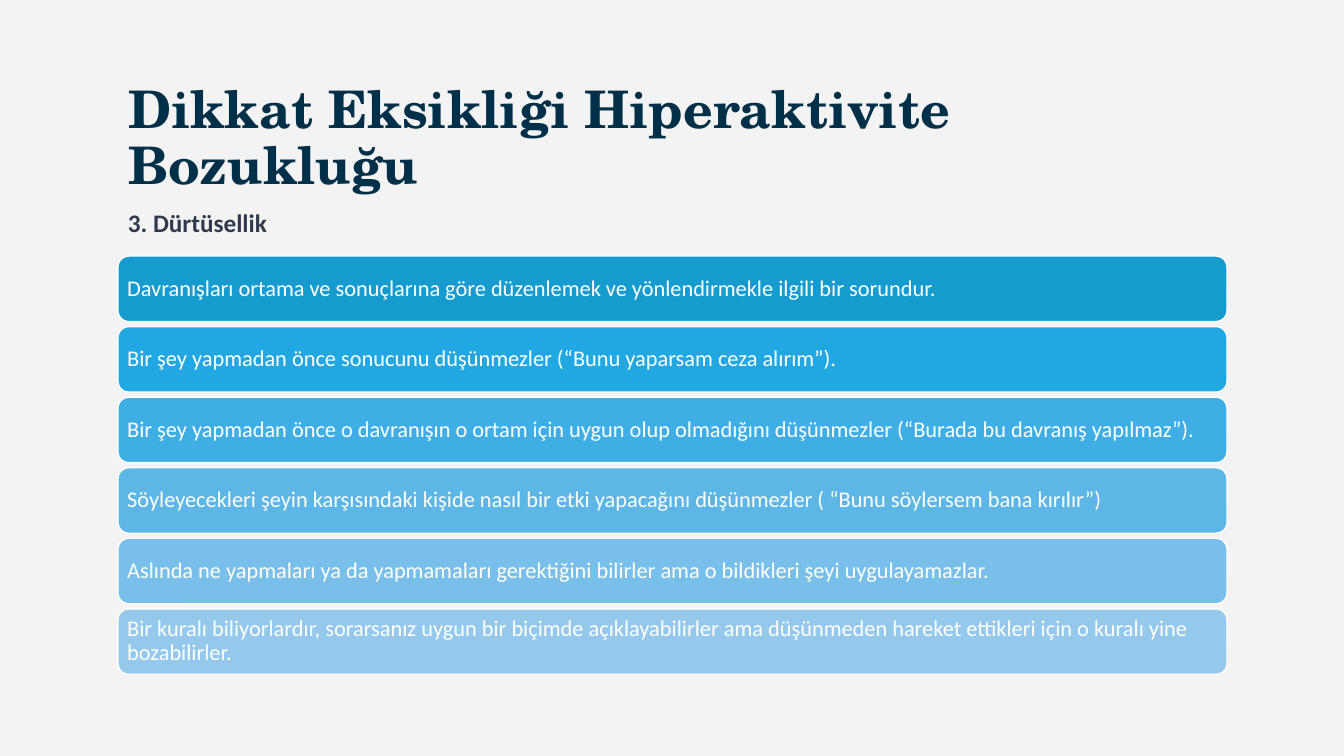
import pptx
import pptx.dml.color
import pptx.enum.shapes
import pptx.enum.text
import pptx.util

EMU_PER_PX = 9144  # 100 px to the inch
LEFT, WIDTH = 117, 1100
BAR_TOP, BAR_HEIGHT, BAR_PITCH = 254, 65, 70
MIDDLE = pptx.enum.text.MSO_ANCHOR.MIDDLE
TOP = pptx.enum.text.MSO_ANCHOR.TOP

BARS = [
    ("169BCE", "Davranışları ortama ve sonuçlarına göre düzenlemek ve yönlendirmekle ilgili bir sorundur."),
    ("21A8E2", "Bir şey yapmadan önce sonucunu düşünmezler (“Bunu yaparsam ceza alırım”)."),
    ("3FAEE4", "Bir şey yapmadan önce o davranışın o ortam için uygun olup olmadığını düşünmezler "
               "(“Burada bu davranış yapılmaz”)."),
    ("5CB6E6", "Söyleyecekleri şeyin karşısındaki kişide nasıl bir etki yapacağını düşünmezler "
               "( “Bunu söylersem bana kırılır”)"),
    ("78BFE9", "Aslında ne yapmaları ya da yapmamaları gerektiğini bilirler ama o bildikleri şeyi uygulayamazlar."),
    ("94C9EC", "Bir kuralı biliyorlardır, sorarsanız uygun bir biçimde açıklayabilirler ama düşünmeden "
               "hareket ettikleri için o kuralı yine bozabilirler."),
]


def px(length):
    return pptx.util.Emu(length * EMU_PER_PX)


def color(hex_string):
    return pptx.dml.color.RGBColor.from_string(hex_string)


def write(shape, text, size, font, hex_string, bold=False, anchor=MIDDLE, insets=(10, 5), spacing=0.9):
    """Fill the shape with one left-aligned paragraph; insets are (side, top and bottom) in px."""
    frame = shape.text_frame
    frame.word_wrap = True
    frame.auto_size = pptx.enum.text.MSO_AUTO_SIZE.NONE
    frame.vertical_anchor = anchor
    frame.margin_left = frame.margin_right = px(insets[0])
    frame.margin_top = frame.margin_bottom = px(insets[1])
    paragraph = frame.paragraphs[0]
    paragraph.alignment = pptx.enum.text.PP_ALIGN.LEFT
    paragraph.line_spacing = spacing
    run = paragraph.add_run()
    run.text = text
    run.font.size = pptx.util.Pt(size)
    run.font.name = font
    run.font.bold = bold
    run.font.color.rgb = color(hex_string)


def place_title(slide, text):
    title = slide.shapes.title
    title.left, title.top, title.width, title.height = px(LEFT), px(77), px(WIDTH), px(123)
    write(title, text, 37, "TeX Gyre Schola", "002F4A", bold=True)


def add_subtitle(slide, text):
    box = slide.shapes.add_textbox(px(LEFT), px(201), px(406), px(40))
    write(box, text, 18, "Calibri", "31394D", bold=True, anchor=TOP, spacing=1.0)


def add_bar(slide, top, fill, text):
    bar = slide.shapes.add_shape(
        pptx.enum.shapes.MSO_SHAPE.ROUNDED_RECTANGLE, px(LEFT), px(top), px(WIDTH), px(BAR_HEIGHT))
    bar.shadow.inherit = False
    bar.fill.solid()
    bar.fill.fore_color.rgb = color(fill)
    bar.line.color.rgb = color("FFFFFF")
    bar.line.width = pptx.util.Pt(1)
    write(bar, text, 16, "Calibri", "FFFFFF", insets=(6, 6))


def main():
    presentation = pptx.Presentation()
    presentation.slide_width, presentation.slide_height = px(1333), px(750)
    title_only = presentation.slide_layouts[5]
    slide = presentation.slides.add_slide(title_only)
    slide.background.fill.solid()
    slide.background.fill.fore_color.rgb = color("F3F3F3")

    place_title(slide, "Dikkat Eksikliği Hiperaktivite Bozukluğu")
    add_subtitle(slide, "3. Dürtüsellik")
    for row, (fill, text) in enumerate(BARS):
        add_bar(slide, BAR_TOP + row * BAR_PITCH, fill, text)

    presentation.save("out.pptx")


if __name__ == "__main__":
    main()
